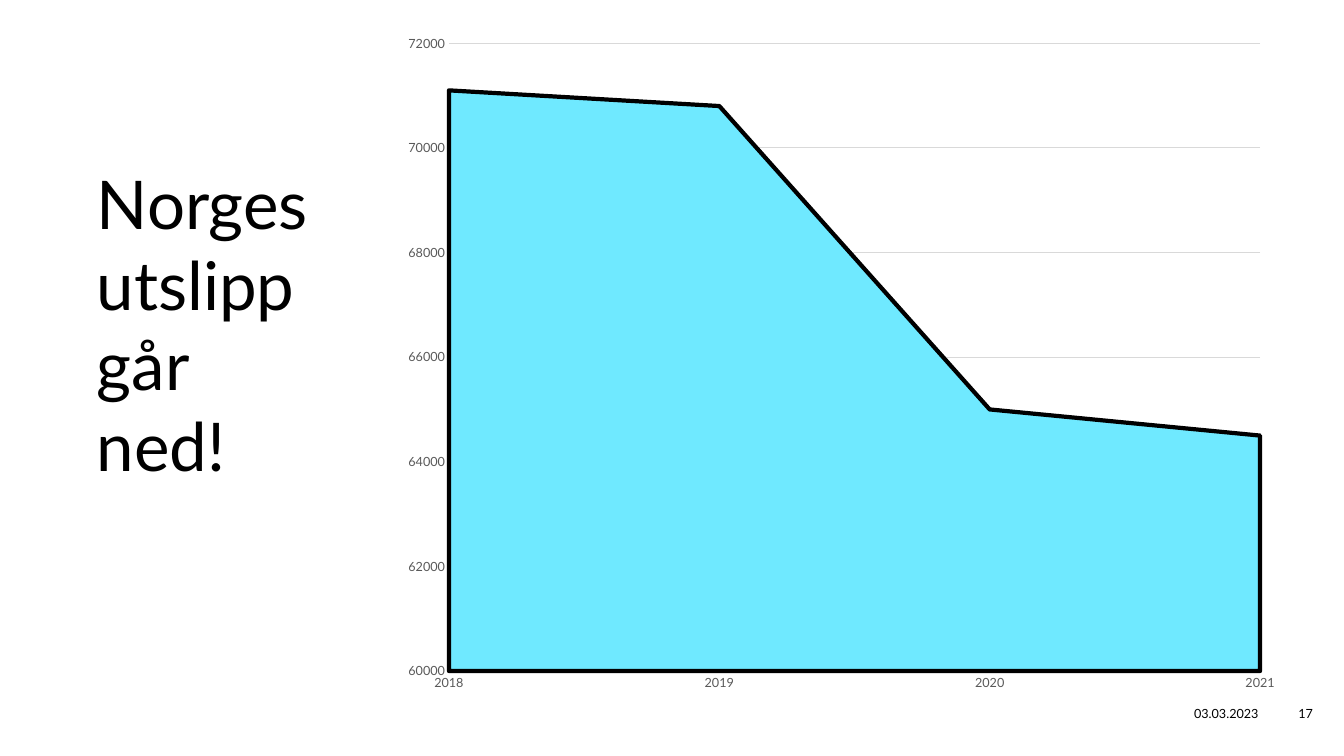
import dataclasses

import pptx
import pptx.chart.data
import pptx.dml.color
import pptx.enum.chart
import pptx.enum.text
import pptx.oxml
import pptx.oxml.ns
import pptx.util


def color(value):
    return pptx.dml.color.RGBColor.from_string(value)


@dataclasses.dataclass(frozen=True)
class Theme:
    font: str = "Lato"
    ink: str = "000000"
    label: str = "595959"
    grid: str = "D9D9D9"
    area: str = "6FE9FF"
    title_size: int = 48
    small_size: int = 9
    chart_size: int = 10
    outline: float = 3
    hairline: float = 0.75


THEME = Theme()
PAGE_WIDTH = pptx.util.Inches(13.33)
PAGE_HEIGHT = pptx.util.Inches(7.5)
EMISSIONS = {"2018": 71100, "2019": 70800, "2020": 65000, "2021": 64500}
PLOT_SHARES = {"x": 0.065, "y": 0.031, "w": 0.898, "h": 0.92}


def region(left, top, width, height):
    return tuple(pptx.util.Inches(length) for length in (left, top, width, height))


def style_font(font, size, ink):
    font.name = THEME.font
    font.size = pptx.util.Pt(size)
    font.color.rgb = color(ink)


def style_line(line, ink, width):
    line.color.rgb = color(ink)
    line.width = pptx.util.Pt(width)


def place_title(page, box, text):
    title = page.shapes.title
    title.left, title.top, title.width, title.height = box
    frame = title.text_frame
    frame.text = text
    frame.word_wrap = True
    frame.auto_size = pptx.enum.text.MSO_AUTO_SIZE.NONE
    frame.vertical_anchor = pptx.enum.text.MSO_ANCHOR.TOP
    frame.margin_left = frame.margin_right = 0
    frame.margin_top = frame.margin_bottom = 0
    para = frame.paragraphs[0]
    para.alignment = pptx.enum.text.PP_ALIGN.LEFT
    style_font(para.font, THEME.title_size, THEME.ink)


def set_plot_layout(chart):
    plot_area = chart._chartSpace.chart.plotArea
    for layout in plot_area.findall(pptx.oxml.ns.qn("c:layout")):
        plot_area.remove(layout)
    shares = "".join(f'<c:{key} val="{share}"/>' for key, share in PLOT_SHARES.items())
    plot_area.insert(0, pptx.oxml.parse_xml(
        f'<c:layout {pptx.oxml.ns.nsdecls("c")}><c:manualLayout>'
        '<c:layoutTarget val="inner"/><c:xMode val="edge"/><c:yMode val="edge"/>'
        f'{shares}</c:manualLayout></c:layout>'))
    for crossing in plot_area.iter(pptx.oxml.ns.qn("c:crossBetween")):
        crossing.set("val", "midCat")


def place_chart(page, box):
    data = pptx.chart.data.CategoryChartData(number_format="0")
    data.categories = list(EMISSIONS)
    data.add_series("Series 1", list(EMISSIONS.values()))
    chart = page.shapes.add_chart(pptx.enum.chart.XL_CHART_TYPE.AREA, *box, data).chart
    chart.has_legend = False
    chart.has_title = False
    style_font(chart.font, THEME.chart_size, THEME.ink)
    set_plot_layout(chart)

    for axis in (chart.category_axis, chart.value_axis):
        axis.major_tick_mark = pptx.enum.chart.XL_TICK_MARK.NONE
        axis.minor_tick_mark = pptx.enum.chart.XL_TICK_MARK.NONE
        style_font(axis.tick_labels.font, THEME.small_size, THEME.label)
    chart.category_axis.has_major_gridlines = False
    style_line(chart.category_axis.format.line, THEME.grid, THEME.hairline)

    values = chart.value_axis
    values.minimum_scale, values.maximum_scale, values.major_unit = 60000, 72000, 2000
    values.tick_labels.number_format = "0"
    values.tick_labels.number_format_is_linked = False
    values.format.line.fill.background()
    values.has_major_gridlines = True
    style_line(values.major_gridlines.format.line, THEME.grid, THEME.hairline)

    chart.plots[0].vary_by_categories = False
    series = chart.plots[0].series[0]
    series.format.fill.solid()
    series.format.fill.fore_color.rgb = color(THEME.area)
    style_line(series.format.line, THEME.ink, THEME.outline)


def place_footer(page, box, text, alignment):
    frame = page.shapes.add_textbox(*box).text_frame
    frame.word_wrap = True
    frame.vertical_anchor = pptx.enum.text.MSO_ANCHOR.MIDDLE
    para = frame.paragraphs[0]
    para.text = text
    para.alignment = alignment
    style_font(para.font, THEME.small_size, THEME.ink)


def build_emissions_page(deck):
    page = deck.slides.add_slide(deck.slide_layouts.get_by_name("Title Only"))
    align = pptx.enum.text.PP_ALIGN
    place_footer(page, region(11.11, 6.88, 1.47, 0.4), "03.03.2023", align.RIGHT)
    place_footer(page, region(12.57, 6.88, 0.76, 0.4), "17", align.CENTER)
    place_chart(page, region(3.87, 0.22, 8.96, 6.77))
    place_title(page, region(0.96, 1.61, 2.59, 3.99), "Norges\vutslipp\vgår\vned!")


def main():
    deck = pptx.Presentation()
    deck.slide_width, deck.slide_height = PAGE_WIDTH, PAGE_HEIGHT
    build_emissions_page(deck)
    deck.save("out.pptx")


if __name__ == "__main__":
    main()
